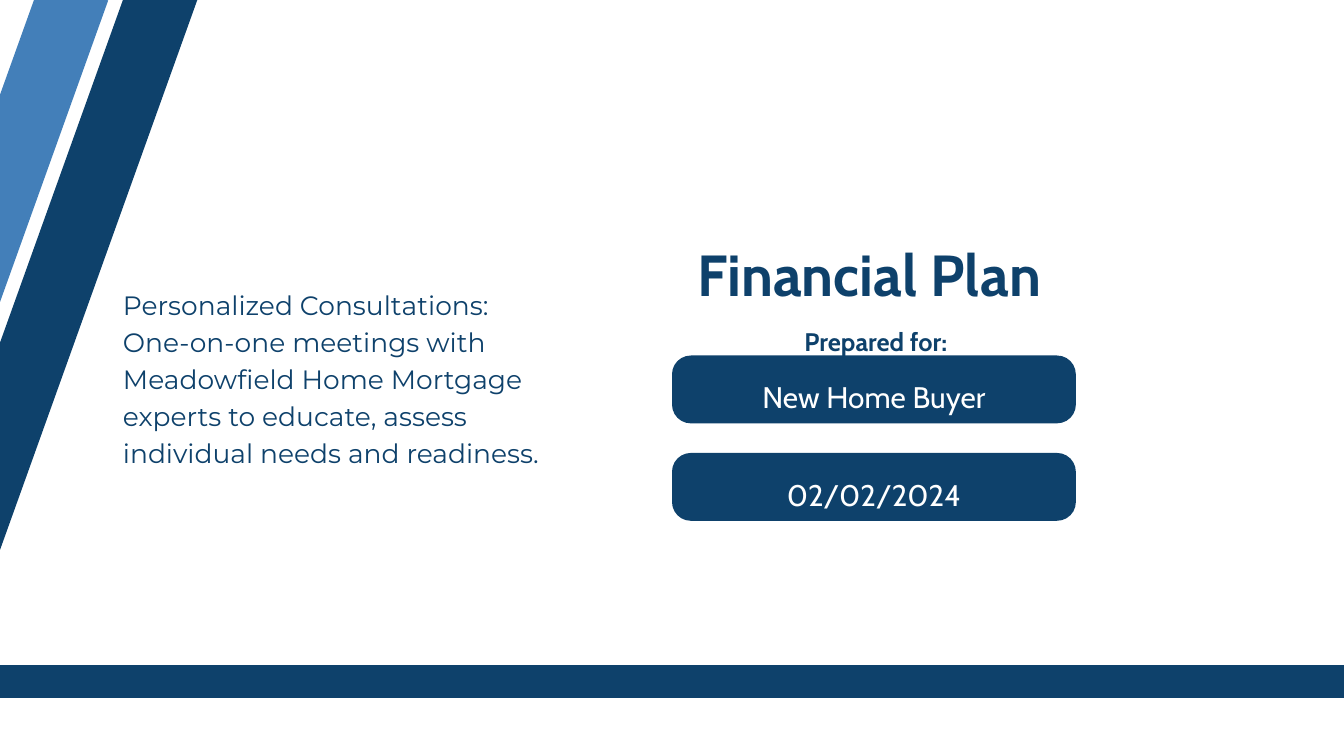
import pptx
import pptx.util
import pptx.dml.color
import pptx.enum.shapes
import pptx.enum.text
import pptx.oxml
import pptx.oxml.ns

Inches, Pt = pptx.util.Inches, pptx.util.Pt
ALIGN = pptx.enum.text.PP_ALIGN

THEME = {
    "navy": "0E416B", "blue": "437FB9", "white": "FFFFFF",
    "heading_font": "Cabin", "body_font": "Montserrat",
    "title": (62, 86.8), "label": (27.2, 38.1),  # size, line spacing
    "body": (28.4, 39.8), "pill": (31.9, 44.7),
}

TITLE = "Financial Plan"
LABEL = "Prepared for:"
BODY = ("Personalized Consultations: One-on-one meetings with Meadowfield Home "
        "Mortgage experts to educate, assess individual needs and readiness.")
PILLS = ["New Home Buyer", "02/02/2024"]

SLIDE_WIDTH, SLIDE_HEIGHT = 20, 11.25
FOOTER_Y = 10.14
STRIPE_RUN, STRIPE_RISE = 6.87, 19.15
STRIPES = [(-2.31, 13.08, "navy"), (-5.75, 18.98, "blue")]  # lower ends
PILL_LEFT, PILL_TOP, PILL_WIDTH, PILL_HEIGHT, PILL_PITCH = 10, 5.29, 6.01, 1.01, 1.45
PILL_RADIUS, PILL_TEXT_OFFSET = 0.28, 0.18


def color(name):
    return pptx.dml.color.RGBColor.from_string(THEME[name])


def add_line(slide, start, end, color_name, width):
    line = slide.shapes.add_connector(
        pptx.enum.shapes.MSO_CONNECTOR.STRAIGHT, *map(Inches, start + end))
    line.line.color.rgb = color(color_name)
    line.line.width = Pt(width)
    line._element.spPr.append(
        pptx.oxml.parse_xml(f'<a:effectLst {pptx.oxml.ns.nsdecls("a")}/>'))


def set_text(shape, text, style, font="heading_font", color_name="navy",
             bold=False, align=ALIGN.CENTER, top_inset=0):
    frame = shape.text_frame
    frame.word_wrap = True
    frame.auto_size = pptx.enum.text.MSO_AUTO_SIZE.NONE
    frame.vertical_anchor = pptx.enum.text.MSO_ANCHOR.TOP
    frame.margin_left = frame.margin_right = frame.margin_bottom = 0
    frame.margin_top = Inches(top_inset)
    frame.text = text
    paragraph = frame.paragraphs[0]
    size, spacing = THEME[style]
    paragraph.alignment = align
    paragraph.line_spacing = Pt(spacing)
    run_font = paragraph.runs[0].font
    run_font.name, run_font.size, run_font.bold = THEME[font], Pt(size), bold
    run_font.color.rgb = color(color_name)


def add_pill(slide, index, text):
    top = PILL_TOP + index * PILL_PITCH
    pill = slide.shapes.add_shape(
        pptx.enum.shapes.MSO_SHAPE.ROUNDED_RECTANGLE,
        *map(Inches, (PILL_LEFT, top, PILL_WIDTH, PILL_HEIGHT)))
    pill.adjustments[0] = PILL_RADIUS / PILL_HEIGHT
    pill.shadow.inherit = False
    pill.fill.solid()
    pill.fill.fore_color.rgb = color("navy")
    pill.line.fill.background()
    set_text(pill, text, "pill", color_name="white", top_inset=PILL_TEXT_OFFSET)


def main():
    presentation = pptx.Presentation()
    presentation.slide_width = Inches(SLIDE_WIDTH)
    presentation.slide_height = Inches(SLIDE_HEIGHT)
    slide = presentation.slides.add_slide(presentation.slide_layouts[5])
    slide.background.fill.solid()
    slide.background.fill.fore_color.rgb = color("white")

    add_line(slide, (0, FOOTER_Y), (SLIDE_WIDTH, FOOTER_Y), "navy", 35.25)
    for x, y, color_name in STRIPES:
        add_line(slide, (x, y), (x + STRIPE_RUN, y - STRIPE_RISE), color_name, 75)

    for index, text in enumerate(PILLS):
        add_pill(slide, index, text)

    title = slide.shapes.title
    title.left, title.top, title.width, title.height = map(Inches, (10, 3.38, 5.87, 1.16))
    set_text(title, TITLE, "title", bold=True)

    label = slide.shapes.add_textbox(*map(Inches, (11.81, 4.77, 2.45, 0.52)))
    set_text(label, LABEL, "label", bold=True)

    body = slide.shapes.add_textbox(*map(Inches, (1.83, 4.22, 6.24, 2.74)))
    set_text(body, BODY, "body", font="body_font", align=ALIGN.LEFT)

    presentation.save("out.pptx")


if __name__ == "__main__":
    main()
